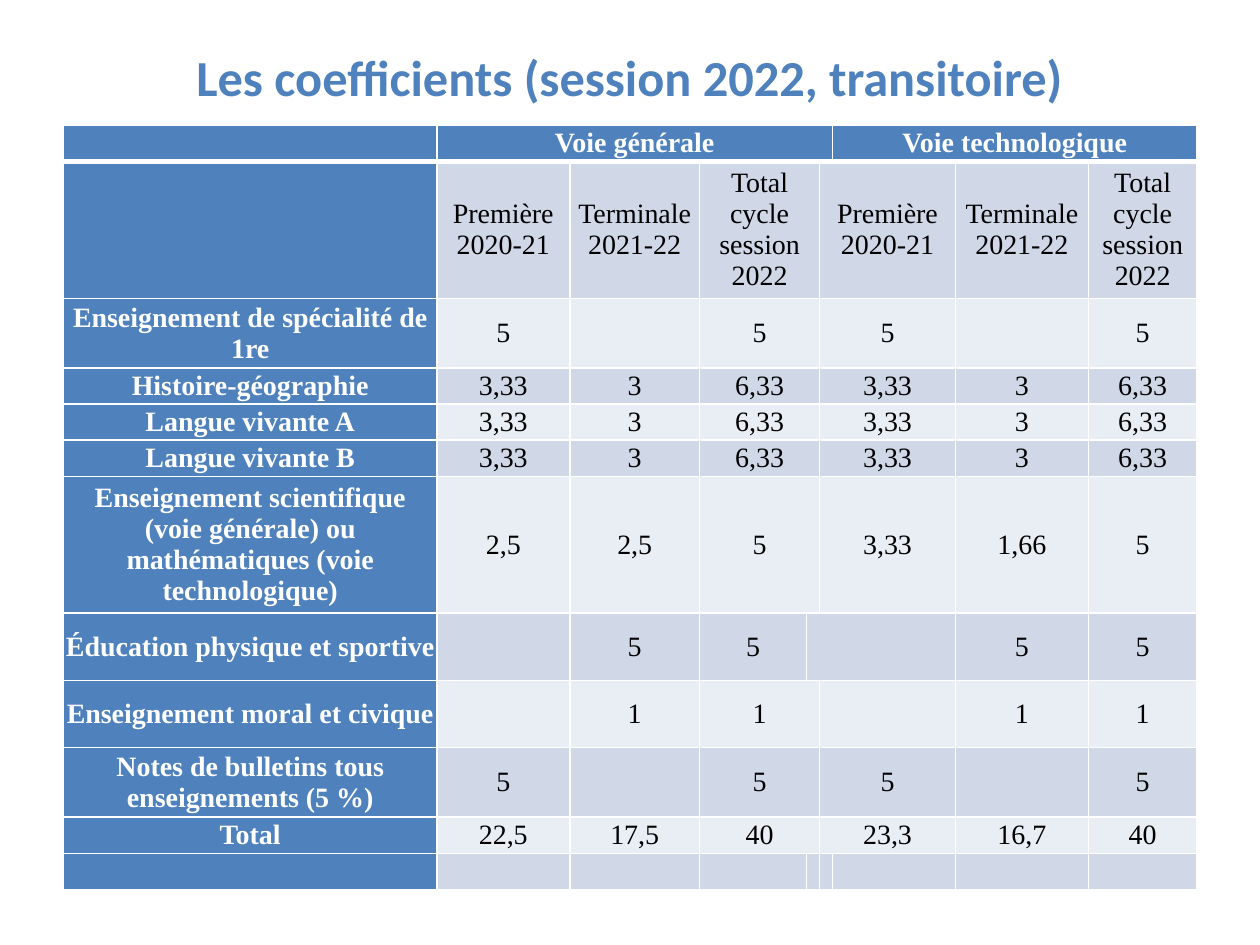
from dataclasses import dataclass

from lxml.etree import SubElement
from pptx import Presentation
from pptx.dml.color import RGBColor as Color
from pptx.enum.text import MSO_ANCHOR as Anchor, PP_ALIGN as Align
from pptx.oxml.ns import qn
from pptx.util import Pt

TITLE = "Les coefficients (session 2022, transitoire)"
YEARS = ["Première\n2020-21", "Terminale\n2021-22", "Total cycle\nsession 2022"]

GROUPS = (1, 5, 3)
REGULAR = (1, 1, 1, 2, 2, 1, 1)
SPORT = (1, 1, 1, 1, 3, 1, 1)
SINGLE = (1,) * 9

LOW, MIDDLE, HIGH = 20.2, 38.4, 74.8
COLUMN_WIDTHS = [213.2, 76, 74.2, 61.2, 7.4, 7.4, 70.2, 76, 62]

ROWS = [
    (LOW, GROUPS, ["", "Voie générale", "Voie technologique"]),
    (HIGH, REGULAR, ["", *YEARS, *YEARS]),
    (MIDDLE, REGULAR, ["Enseignement de spécialité de 1re", "5", "", "5", "5", "", "5"]),
    (LOW, REGULAR, ["Histoire-géographie", "3,33", "3", "6,33", "3,33", "3", "6,33"]),
    (LOW, REGULAR, ["Langue vivante A", "3,33", "3", "6,33", "3,33", "3", "6,33"]),
    (LOW, REGULAR, ["Langue vivante B", "3,33", "3", "6,33", "3,33", "3", "6,33"]),
    (HIGH, REGULAR, ["Enseignement scientifique (voie générale) ou mathématiques (voie technologique)",
                     "2,5", "2,5", "5", "3,33", "1,66", "5"]),
    (MIDDLE, SPORT, ["Éducation physique et sportive", "", "5", "5", "", "5", "5"]),
    (MIDDLE, REGULAR, ["Enseignement moral et civique", "", "1", "1", "", "1", "1"]),
    (MIDDLE, REGULAR, ["Notes de bulletins tous enseignements (5 %)", "5", "", "5", "5", "", "5"]),
    (LOW, REGULAR, ["Total", "22,5", "17,5", "40", "23,3", "16,7", "40"]),
    (LOW, SINGLE, [""] * 9),
]


@dataclass(frozen=True)
class Theme:
    accent: str = "4F81BD"
    bands: tuple = ("E9EDF4", "D0D8E8")
    light: str = "FFFFFF"
    dark: str = "000000"
    title_font: str = "Calibri"
    table_font: str = "Times New Roman"
    title_size: float = 28.8
    table_size: float = 16
    inset: float = 0.72
    thin: float = 1
    thick: float = 3


THEME = Theme()


def format_text(text_frame, font_name, size, color, bold):
    for paragraph in text_frame.paragraphs:
        paragraph.alignment = Align.CENTER
        for run in paragraph.runs:
            font = run.font
            font.name, font.size, font.bold = font_name, Pt(size), bold
            font.color.rgb = Color.from_string(color)
        if not paragraph.runs:
            SubElement(paragraph._p, qn("a:endParaRPr"), sz=str(int(size * 100)))


def add_borders(cell, row):
    properties = cell._tc.get_or_add_tcPr()
    heavy_sides = {0: "B", 1: "T"}
    for side in "LRTB":
        width = THEME.thick if heavy_sides.get(row) == side else THEME.thin
        line = SubElement(properties, qn(f"a:ln{side}"), w=str(Pt(width)))
        fill = SubElement(line, qn("a:solidFill"))
        SubElement(fill, qn("a:srgbClr"), val=THEME.light)


def style_cell(cell, row, column):
    heading = row == 0 or column == 0
    add_borders(cell, row)
    cell.fill.solid()
    cell.fill.fore_color.rgb = Color.from_string(THEME.accent if heading else THEME.bands[row % 2])
    cell.vertical_anchor = Anchor.MIDDLE
    cell.margin_left = cell.margin_right = Pt(THEME.inset)
    cell.margin_top = cell.margin_bottom = Pt(THEME.inset)
    format_text(cell.text_frame, THEME.table_font, THEME.table_size,
                THEME.light if heading else THEME.dark, heading)


def add_title(slide):
    text_frame = slide.shapes.add_textbox(Pt(36), Pt(21.6), Pt(648), Pt(44)).text_frame
    text_frame.word_wrap = True
    text_frame.vertical_anchor = Anchor.MIDDLE
    text_frame.text = TITLE
    format_text(text_frame, THEME.title_font, THEME.title_size, THEME.accent, True)


def add_coefficients(slide):
    height = sum(row_height for row_height, _, _ in ROWS)
    table = slide.shapes.add_table(len(ROWS), len(COLUMN_WIDTHS), Pt(36.4), Pt(71.6),
                                   Pt(sum(COLUMN_WIDTHS)), Pt(height)).table
    for column, width in zip(table.columns, COLUMN_WIDTHS):
        column.width = Pt(width)
    for row, (row_height, spans, texts) in enumerate(ROWS):
        table.rows[row].height = Pt(row_height)
        start = 0
        for span, text in zip(spans, texts):
            cell = table.cell(row, start)
            cell.text_frame.text = text
            if span > 1:
                cell.merge(table.cell(row, start + span - 1))
            start += span
        for column in range(len(COLUMN_WIDTHS)):
            style_cell(table.cell(row, column), row, column)


def main():
    """Build the slide of exam coefficients."""
    presentation = Presentation()
    presentation.slide_width, presentation.slide_height = Pt(720), Pt(540)
    slide = presentation.slides.add_slide(presentation.slide_layouts[6])
    add_title(slide)
    add_coefficients(slide)
    presentation.save("out.pptx")


if __name__ == "__main__":
    main()
